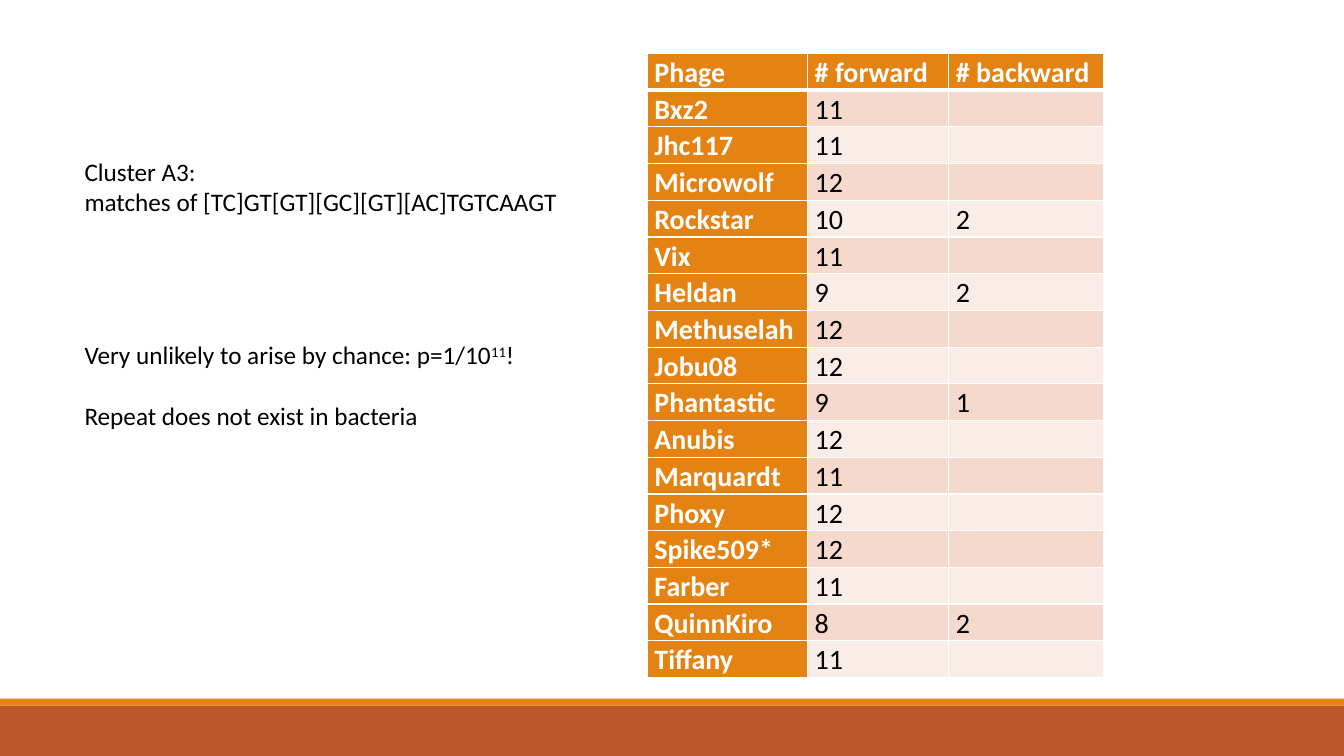
import dataclasses
import typing

import lxml.etree
import pptx
import pptx.dml.color
import pptx.enum.shapes
import pptx.oxml.ns
import pptx.util


@dataclasses.dataclass(frozen=True)
class Theme:
    font: str = "Calibri"
    note_size: int = 18
    table_size: int = 20
    text: str = "000000"
    white: str = "FFFFFF"
    orange: str = "E48312"
    rust: str = "BD582C"
    odd_row: str = "F5D9CC"
    even_row: str = "FAEDE7"


class Band(typing.NamedTuple):
    top: float  # shares of the slide height
    height: float
    color: str


class Count(typing.NamedTuple):
    phage: str
    forward: str
    backward: str = ""


class Note(typing.NamedTuple):
    pieces: tuple[tuple[str, int], ...]  # text and baseline shift in percent
    lines_before: int = 0


THEME = Theme()
WIDTH, HEIGHT = pptx.util.Inches(13.33), pptx.util.Inches(7.5)
NOTE_LINE = 1.22 * THEME.note_size
COLUMN_SHARES = (0.1193, 0.105, 0.1155)
ROW_SHARE = 0.0485

BANDS = (
    Band(0.9333, 0.0667, THEME.rust),
    Band(0.924, 0.0093, THEME.orange),
)
HEADER = Count("Phage", "# forward", "# backward")
COUNTS = (
    Count("Bxz2", "11"),
    Count("Jhc117", "11"),
    Count("Microwolf", "12"),
    Count("Rockstar", "10", "2"),
    Count("Vix", "11"),
    Count("Heldan", "9", "2"),
    Count("Methuselah", "12"),
    Count("Jobu08", "12"),
    Count("Phantastic", "9", "1"),
    Count("Anubis", "12"),
    Count("Marquardt", "11"),
    Count("Phoxy", "12"),
    Count("Spike509*", "12"),
    Count("Farber", "11"),
    Count("QuinnKiro", "8", "2"),
    Count("Tiffany", "11"),
)
NOTES = (
    Note((("Cluster A3:", 0),)),
    Note((("matches of [TC]GT[GT][GC][GT][AC]TGTCAAGT", 0),)),
    Note((("Very unlikely to arise by chance: p=1/10", 0), ("11", 30), ("!", 0)), 4),
    Note((("Repeat does not exist in bacteria", 0),), 1),
)


def rgb(color: str) -> pptx.dml.color.RGBColor:
    return pptx.dml.color.RGBColor.from_string(color)


def across(share: float) -> int:
    return round(WIDTH * share)


def down(share: float) -> int:
    return round(HEIGHT * share)


def write(paragraph, text: str, *, size: int, color: str = THEME.text,
          bold: bool = False, baseline: int = 0) -> None:
    run = paragraph.add_run()
    run.text = text
    run.font.name = THEME.font
    run.font.size = pptx.util.Pt(size)
    run.font.bold = bold
    run.font.color.rgb = rgb(color)
    if baseline:
        run._r.get_or_add_rPr().set("baseline", str(baseline * 1000))


def draw_band(slide, band: Band) -> None:
    bar = slide.shapes.add_shape(pptx.enum.shapes.MSO_SHAPE.RECTANGLE,
                                 0, down(band.top), WIDTH, down(band.height))
    bar.shadow.inherit = False
    bar.fill.solid()
    bar.fill.fore_color.rgb = rgb(band.color)
    bar.line.fill.background()


def add_borders(cell, top: float, bottom: float) -> None:
    qn = pptx.oxml.ns.qn
    properties = cell._tc.get_or_add_tcPr()
    for side, points in (("L", 1), ("R", 1), ("T", top), ("B", bottom)):
        edge = lxml.etree.SubElement(properties, qn(f"a:ln{side}"),
                                     w=str(pptx.util.Pt(points)))
        fill = lxml.etree.SubElement(edge, qn("a:solidFill"))
        lxml.etree.SubElement(fill, qn("a:srgbClr"), val=THEME.white)


def fill_cell(cell, text: str, row: int, column: int) -> None:
    heading = row == 0 or column == 0
    add_borders(cell, top=3 if row == 1 else 1, bottom=3 if row == 0 else 1)
    cell.margin_left = cell.margin_right = pptx.util.Inches(0.07)
    cell.margin_top = cell.margin_bottom = 0
    cell.fill.solid()
    stripe = THEME.odd_row if row % 2 else THEME.even_row
    cell.fill.fore_color.rgb = rgb(THEME.orange if heading else stripe)
    paragraph = cell.text_frame.paragraphs[0]
    paragraph.line_spacing = 1.07
    paragraph.font.size = pptx.util.Pt(THEME.table_size)
    if text:
        write(paragraph, text, size=THEME.table_size, bold=heading,
              color=THEME.white if heading else THEME.text)


def draw_counts(slide) -> None:
    rows = (HEADER, *COUNTS)
    counts = slide.shapes.add_table(
        len(rows), len(COLUMN_SHARES), across(0.4817), down(0.0707),
        across(sum(COLUMN_SHARES)), down(ROW_SHARE * len(rows))).table
    for column, share in zip(counts.columns, COLUMN_SHARES):
        column.width = across(share)
    for r, count in enumerate(rows):
        counts.rows[r].height = down(ROW_SHARE)
        for c, text in enumerate(count):
            fill_cell(counts.cell(r, c), text, r, c)


def draw_notes(slide) -> None:
    frame = slide.shapes.add_textbox(across(0.0555), down(0.2),
                                     across(0.405), down(0.417)).text_frame
    frame.word_wrap = True
    for i, note in enumerate(NOTES):
        paragraph = frame.add_paragraph() if i else frame.paragraphs[0]
        paragraph.space_before = pptx.util.Pt(note.lines_before * NOTE_LINE)
        for text, baseline in note.pieces:
            write(paragraph, text, size=THEME.note_size, baseline=baseline)


def main() -> None:
    deck = pptx.Presentation()
    deck.slide_width, deck.slide_height = WIDTH, HEIGHT
    slide = deck.slides.add_slide(deck.slide_layouts[6])
    # Footer bands
    for band in BANDS:
        draw_band(slide, band)
    # Match counts per phage
    draw_counts(slide)
    # Motif and its significance
    draw_notes(slide)
    deck.save("out.pptx")


if __name__ == "__main__":
    main()
